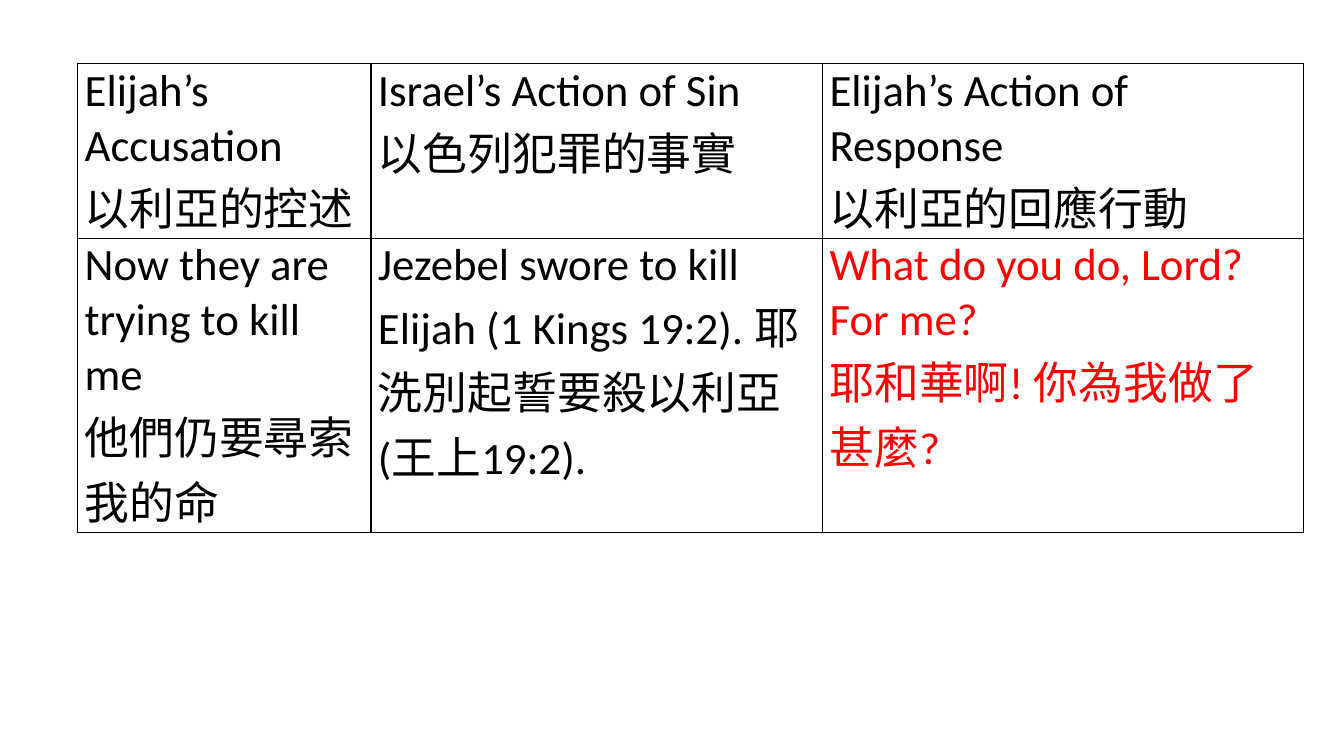
from lxml import etree
from pptx import Presentation
from pptx.dml.color import RGBColor
from pptx.oxml.ns import qn
from pptx.util import Pt

COLORS = {"text": "000000", "border": "000000", "response": "FF0000"}
FONT_NAME = "Calibri"
FONT_SIZE = Pt(32)
BORDER_WIDTH = Pt(1)
SIDE_MARGIN = Pt(5)
BLANK_LAYOUT = 6

COLUMN_WIDTHS = [Pt(209.5), Pt(322.6), Pt(343.4)]
ROW_HEIGHTS = [Pt(44), Pt(65.5)]

HEADINGS = [
    ["Elijah’s Accusation", "以利亞的控述"],
    ["Israel’s Action of Sin", "以色列犯罪的事實"],
    ["Elijah’s Action of Response", "以利亞的回應行動"],
]
ANSWERS = [
    ["Now they are trying to kill me", "他們仍要尋索我的命"],
    ["Jezebel swore to kill Elijah (1 Kings 19:2). 耶洗別起誓要殺以利亞 (王上19:2)."],
    ["What do you do, Lord? For me?", "耶和華啊! 你為我做了甚麼?"],
]


def add_borders(cell):
    """Draw a solid line on all four sides of a cell."""
    properties = cell._tc.get_or_add_tcPr()
    for side in ("a:lnL", "a:lnR", "a:lnT", "a:lnB"):
        line = etree.SubElement(properties, qn(side), w=str(BORDER_WIDTH))
        fill = etree.SubElement(line, qn("a:solidFill"))
        etree.SubElement(fill, qn("a:srgbClr"), val=COLORS["border"])


def fill_cell(cell, lines, color):
    """Write one paragraph per line and format the cell."""
    cell.margin_left = cell.margin_right = SIDE_MARGIN
    cell.margin_top = cell.margin_bottom = 0
    add_borders(cell)
    cell.fill.background()
    cell.text = "\n".join(lines)
    for paragraph in cell.text_frame.paragraphs:
        paragraph.font.name = FONT_NAME
        paragraph.font.size = FONT_SIZE
        paragraph.font.bold = False
        paragraph.font.color.rgb = RGBColor.from_string(color)


def add_accusation_table(slide):
    """Add the table that sets accusation, sin and response side by side."""
    frame = slide.shapes.add_table(
        len(ROW_HEIGHTS), len(COLUMN_WIDTHS),
        Pt(55.5), Pt(45.4), sum(COLUMN_WIDTHS), sum(ROW_HEIGHTS))
    table = frame.table
    table.first_row = False
    table.horz_banding = False
    for column, width in zip(table.columns, COLUMN_WIDTHS):
        column.width = width
    for row, height in zip(table.rows, ROW_HEIGHTS):
        row.height = height
    for row_index, contents in enumerate([HEADINGS, ANSWERS]):
        for column_index, lines in enumerate(contents):
            is_response = lines is ANSWERS[-1]
            color = COLORS["response" if is_response else "text"]
            fill_cell(table.cell(row_index, column_index), lines, color)


def main():
    """Build the slide and save it."""
    presentation = Presentation()
    presentation.slide_width = Pt(960)
    presentation.slide_height = Pt(540)
    layout = presentation.slide_layouts[BLANK_LAYOUT]
    add_accusation_table(presentation.slides.add_slide(layout))
    presentation.save("out.pptx")


if __name__ == "__main__":
    main()
